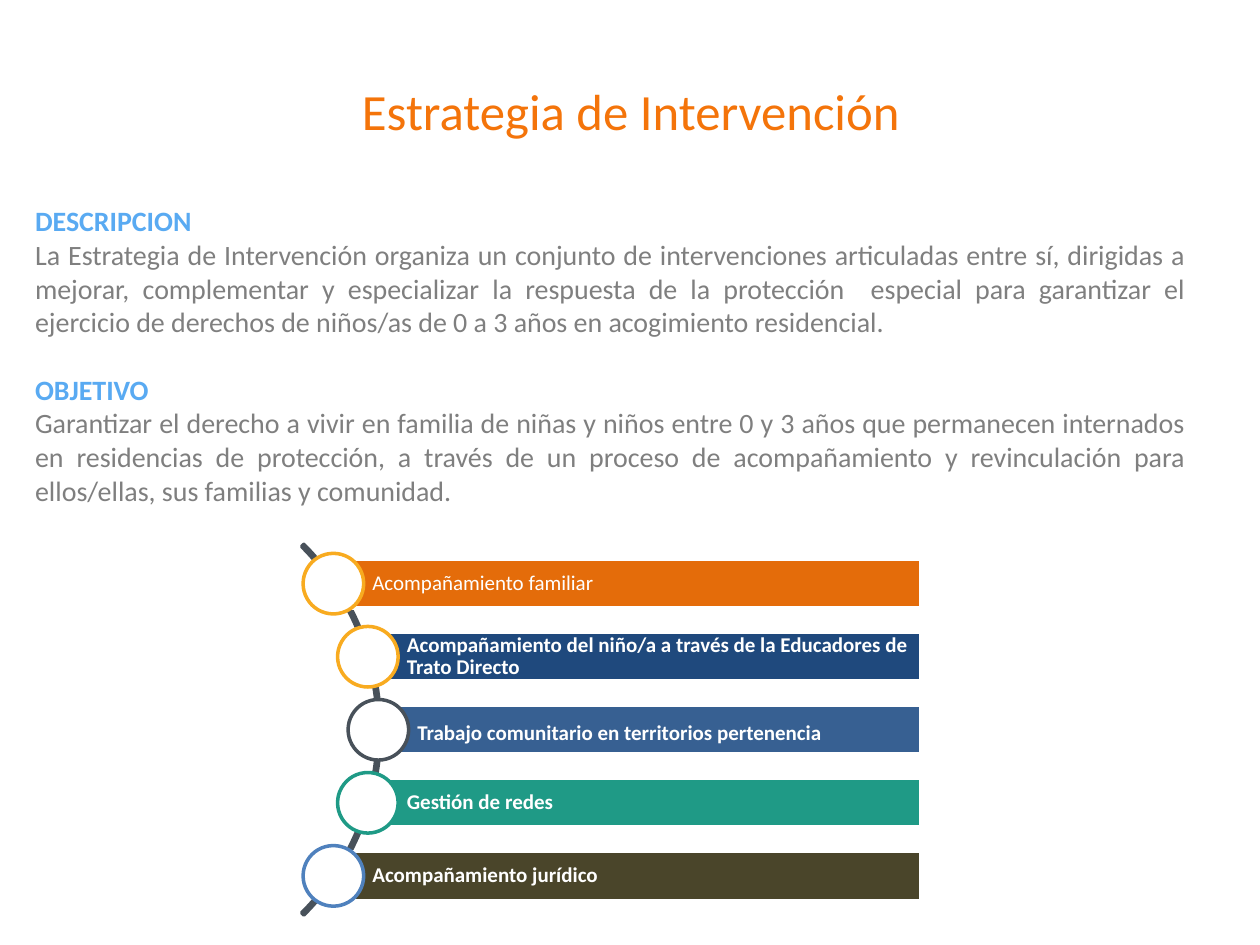
from dataclasses import dataclass
from math import sqrt

from pptx import Presentation
from pptx.dml.color import RGBColor
from pptx.enum.shapes import MSO_SHAPE as Preset
from pptx.enum.text import MSO_ANCHOR as Anchor, PP_ALIGN as Align
from pptx.shapes.autoshape import Shape
from pptx.slide import Slide
from pptx.text.text import TextFrame
from pptx.util import Pt

WHITE, SLATE = "FFFFFF", "48515A"
ORANGE, BLUE, GREY = "F4740A", "59AAF2", "7F7F7F"

ARC_X, ARC_Y, ARC_RADIUS = 67.7, 417, 149.8
NODE_ORBIT, NODE_SIZE = 148.5, 34.6
BAND_RIGHT, BAND_HEIGHT, BAND_PITCH = 526.3, 28, 41.75


@dataclass
class Band:
    text: str
    fill: str
    ring: str
    bold: bool = True
    drop: float = 0


@dataclass
class Section:
    heading: str
    body: str


BANDS = [
    Band("Acompañamiento familiar", "E46C0A", "F8AB20", bold=False),
    Band("Acompañamiento del niño/a a través de la Educadores de Trato Directo",
         "1F497D", "F8AB20"),
    Band("Trabajo comunitario en territorios pertenencia", "376092", SLATE, drop=5),
    Band("Gestión de redes", "1F9A86", "1F9A86"),
    Band("Acompañamiento jurídico", "4A452A", "4F81BD"),
]

SECTIONS = [
    Section("DESCRIPCION",
            "La Estrategia de Intervención organiza un conjunto de intervenciones "
            "articuladas entre sí, dirigidas a mejorar, complementar y especializar la "
            "respuesta de la protección  especial para garantizar el ejercicio de derechos "
            "de niños/as de 0 a 3 años en acogimiento residencial."),
    Section("OBJETIVO",
            "Garantizar el derecho a vivir en familia de niñas y niños entre 0 y 3 años que "
            "permanecen internados en residencias de protección, a través de un proceso de "
            "acompañamiento y revinculación para ellos/ellas, sus familias y comunidad."),
]


def color(value: str) -> RGBColor:
    return RGBColor.from_string(value)


def write(frame: TextFrame, text: str, *, size: float, ink: str, bold: bool = False,
          align: Align = Align.LEFT, spacing: float = 1, before: float = 0) -> None:
    first = frame.paragraphs[0]
    paragraph = frame.add_paragraph() if first.runs else first
    paragraph.alignment = align
    paragraph.line_spacing = spacing
    paragraph.space_before = Pt(before)
    run = paragraph.add_run()
    run.text = text
    run.font.name = "Calibri"
    run.font.size = Pt(size)
    run.font.bold = bold
    run.font.color.rgb = color(ink)


def add_text_box(slide: Slide, left: float, top: float, width: float, height: float,
                 anchor: Anchor) -> TextFrame:
    frame = slide.shapes.add_textbox(Pt(left), Pt(top), Pt(width), Pt(height)).text_frame
    frame.word_wrap = True
    frame.vertical_anchor = anchor
    return frame


def add_preset(slide: Slide, preset: Preset, left: float, top: float, width: float,
               height: float, *, line: str, fill: str | None = None) -> Shape:
    shape = slide.shapes.add_shape(preset, Pt(left), Pt(top), Pt(width), Pt(height))
    shape.shadow.inherit = False
    if fill:
        shape.fill.solid()
        shape.fill.fore_color.rgb = color(fill)
    else:
        shape.fill.background()
    shape.line.color.rgb = color(line)
    shape.line.width = Pt(2)
    return shape


def add_arc(slide: Slide) -> None:
    arc = add_preset(slide, Preset.BLOCK_ARC, ARC_X - ARC_RADIUS, ARC_Y - ARC_RADIUS,
                     2 * ARC_RADIUS, 2 * ARC_RADIUS, line=SLATE)
    for index, value in enumerate((189, 27, 0.006)):
        arc.adjustments[index] = value


def add_band(slide: Slide, band: Band, offset: float) -> None:
    left = ARC_X + sqrt(NODE_ORBIT ** 2 - offset ** 2)
    middle = ARC_Y + offset
    bar = add_preset(slide, Preset.RECTANGLE, left, middle - BAND_HEIGHT / 2,
                     BAND_RIGHT - left, BAND_HEIGHT, fill=band.fill, line=WHITE)
    frame = bar.text_frame
    frame.word_wrap = True
    frame.vertical_anchor = Anchor.MIDDLE
    frame.margin_left = Pt(22.3)
    frame.margin_right = frame.margin_bottom = Pt(2.2)
    frame.margin_top = Pt(2.2 + band.drop)
    write(frame, band.text, size=12, ink=WHITE, bold=band.bold, spacing=0.9)
    add_preset(slide, Preset.OVAL, left - NODE_SIZE / 2, middle - NODE_SIZE / 2,
               NODE_SIZE, NODE_SIZE, fill=WHITE, line=band.ring)


def main() -> None:
    presentation = Presentation()
    presentation.slide_width, presentation.slide_height = Pt(720), Pt(540)
    slide = presentation.slides.add_slide(presentation.slide_layouts[6])

    title = add_text_box(slide, 36.7, 18, 648, 90, Anchor.MIDDLE)
    write(title, "Estrategia de Intervención", size=29, ink=ORANGE, align=Align.CENTER)

    body = add_text_box(slide, 13, 113, 671.8, 200.9, Anchor.TOP)
    for index, section in enumerate(SECTIONS):
        write(body, section.heading, size=16, ink=BLUE, bold=True, align=Align.JUSTIFY,
              before=19.5 * index)
        write(body, section.body, size=16, ink=GREY, align=Align.JUSTIFY)

    add_arc(slide)
    for index, band in enumerate(BANDS):
        add_band(slide, band, (index - len(BANDS) // 2) * BAND_PITCH)

    presentation.save("out.pptx")


if __name__ == "__main__":
    main()
